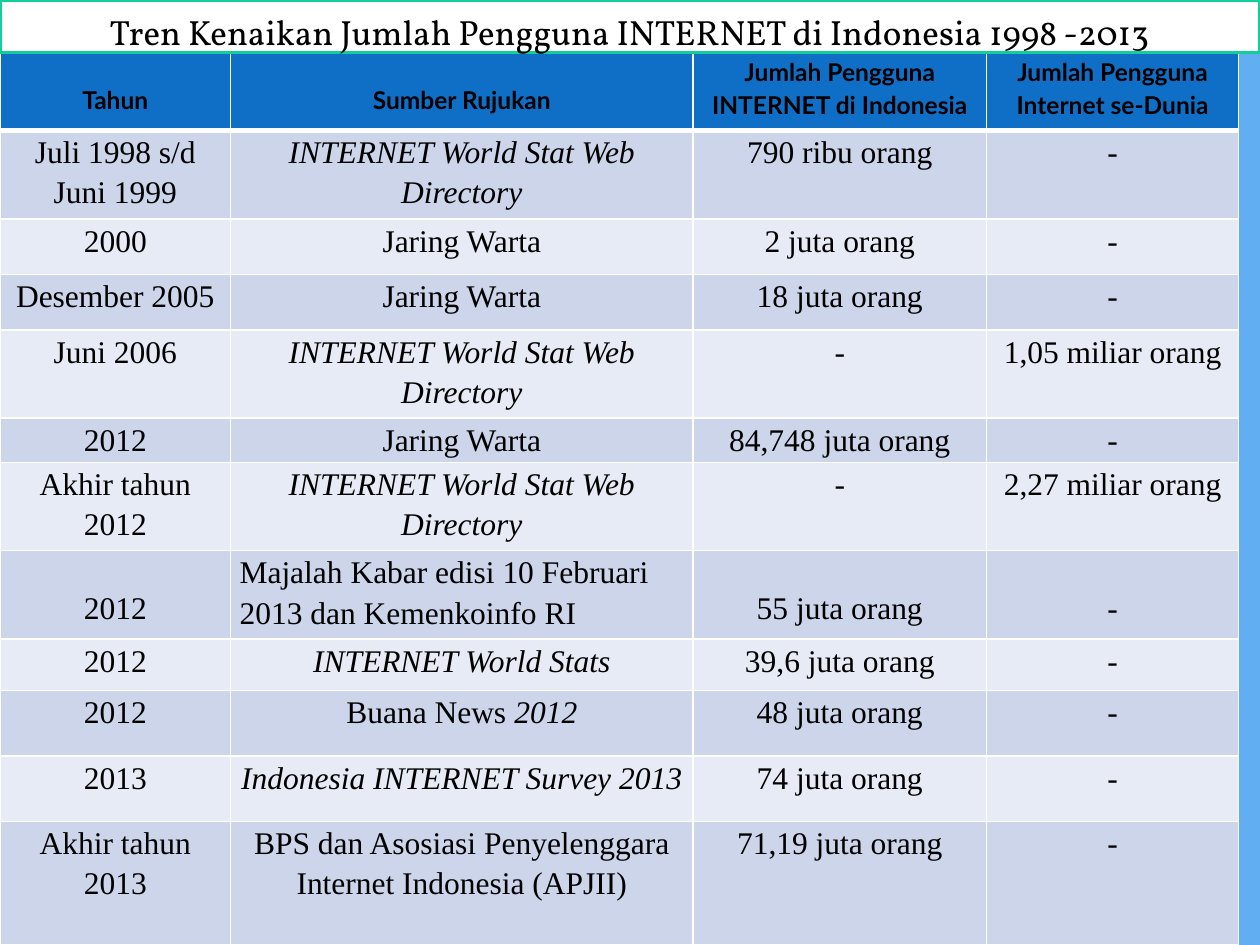
from lxml import etree
from pptx import Presentation
from pptx.dml.color import RGBColor
from pptx.enum import shapes, text
from pptx.oxml import ns
from pptx.util import Cm, Pt

SKY = RGBColor(0x62, 0xAE, 0xF2)
BLUE = RGBColor(0x0F, 0x6F, 0xC6)
GREEN = RGBColor(0x10, 0xCF, 0x9B)
BAND_DARK = RGBColor(0xCC, 0xD5, 0xEA)
BAND_LIGHT = RGBColor(0xE7, 0xEB, 0xF5)
WHITE = RGBColor(0xFF, 0xFF, 0xFF)
BLACK = RGBColor(0, 0, 0)

TITLE = "Tren Kenaikan Jumlah Pengguna INTERNET di Indonesia 1998 -2013"
HEADINGS = ("Tahun", "Sumber Rujukan", "Jumlah Pengguna INTERNET di Indonesia",
            "Jumlah Pengguna Internet se-Dunia")
DIRECTORY = "*INTERNET World Stat Web Directory"
MAGAZINE = "Majalah Kabar edisi 10 Februari 2013 dan Kemenkoinfo RI"
# An asterisk starts the italic part of a text.
RECORDS = (
    ("Juli 1998 s/d\nJuni 1999", DIRECTORY, "790 ribu orang", "-"),
    ("2000", "Jaring Warta", "2 juta orang", "-"),
    ("Desember 2005", "Jaring Warta", "18 juta orang", "-"),
    ("Juni 2006", DIRECTORY, "-", "1,05 miliar orang"),
    ("2012", "Jaring Warta", "84,748 juta orang", "-"),
    ("Akhir tahun 2012", DIRECTORY, "-", "2,27 miliar orang"),
    ("2012", MAGAZINE, "55 juta orang", "-"),
    ("2012", "*INTERNET World Stats", "39,6 juta orang", "-"),
    ("2012", "Buana News *2012", "48 juta orang", "-"),
    ("2013", "*Indonesia INTERNET Survey 2013", "74 juta orang", "-"),
    ("Akhir tahun 2013", "BPS dan Asosiasi Penyelenggara Internet Indonesia (APJII)",
     "71,19 juta orang", "-"),
)
COLUMN_WIDTHS = (4.65, 9.32, 5.92, 5.08)
ROW_HEIGHTS = (1.57, 1.78, 1.12, 1.12, 1.78, 0.89, 1.78, 1.78, 1.04, 1.32, 1.32, 2.49)


def set_font(font, name, size, bold=False, italic=False):
    font.name, font.size = name, Pt(size)
    font.bold, font.italic = bold, italic
    font.color.rgb = BLACK


def add_title(slide, left, top, width, height):
    banner = slide.shapes.add_shape(shapes.MSO_SHAPE.RECTANGLE, left, top, width, height)
    banner.shadow.inherit = False
    banner.fill.solid()
    banner.fill.fore_color.rgb = WHITE
    banner.line.color.rgb = GREEN
    banner.line.width = Pt(2)
    frame = banner.text_frame
    frame.word_wrap = True
    frame.margin_left = frame.margin_right = frame.margin_bottom = 0
    frame.vertical_anchor = text.MSO_ANCHOR.BOTTOM
    frame.text = TITLE
    heading = frame.paragraphs[0]
    heading.alignment = text.PP_ALIGN.CENTER
    set_font(heading.runs[0].font, "Vollkorn", 20)


def add_borders(cell, bottom_width):
    """Draw white cell borders; they must come before the fill in tcPr."""
    properties = cell._tc.get_or_add_tcPr()
    for side, width in (("L", 1), ("R", 1), ("T", 1), ("B", bottom_width)):
        border = etree.SubElement(properties, ns.qn(f"a:ln{side}"), w=str(Pt(width)))
        fill = etree.SubElement(border, ns.qn("a:solidFill"))
        etree.SubElement(fill, ns.qn("a:srgbClr"), val=str(WHITE))


def fill_cell(cell, content, color, font_name, size, bold=False, drop=0,
              alignment=text.PP_ALIGN.CENTER):
    """Write and style one cell; drop lowers its text by that many centimetres."""
    add_borders(cell, 3 if bold else 1)
    cell.fill.solid()
    cell.fill.fore_color.rgb = color
    cell.margin_left = cell.margin_right = Cm(0.18)
    cell.margin_top, cell.margin_bottom = Cm(drop), 0
    cell.text_frame.text = content.replace("*", "")
    for paragraph, line in zip(cell.text_frame.paragraphs, content.split("\n")):
        paragraph.alignment = alignment
        paragraph.line_spacing = 1.15
        upright, _, slanted = line.partition("*")
        paragraph.text = upright or slanted
        if upright and slanted:
            paragraph.add_run().text = slanted
        for run in paragraph.runs:
            set_font(run.font, font_name, size, bold, bool(slanted) and run.text == slanted)


def add_user_table(slide, left, top):
    table = slide.shapes.add_table(
        len(ROW_HEIGHTS), len(COLUMN_WIDTHS), left, top,
        Cm(sum(COLUMN_WIDTHS)), Cm(sum(ROW_HEIGHTS))).table
    for column, width in zip(table.columns, COLUMN_WIDTHS):
        column.width = Cm(width)
    for row, height in zip(table.rows, ROW_HEIGHTS):
        row.height = Cm(height)
    for c, heading in enumerate(HEADINGS):
        fill_cell(table.cell(0, c), heading, BLUE, "Lato", 14, bold=True,
                  drop=0.58 if c < 2 else 0)
    for r, record in enumerate(RECORDS, start=1):
        band = BAND_DARK if r % 2 else BAND_LIGHT
        for c, content in enumerate(record):
            is_magazine = content == MAGAZINE
            fill_cell(table.cell(r, c), content, band, "Times New Roman", 18,
                      drop=0.71 if MAGAZINE in record and not is_magazine else 0,
                      alignment=text.PP_ALIGN.LEFT if is_magazine else text.PP_ALIGN.CENTER)


def main():
    deck = Presentation()
    deck.slide_width, deck.slide_height = Cm(25.4), Cm(19.05)
    slide = deck.slides.add_slide(deck.slide_layouts[6])
    slide.background.fill.solid()
    slide.background.fill.fore_color.rgb = SKY
    title_height = Cm(1.06)
    add_user_table(slide, 0, title_height)
    add_title(slide, 0, 0, deck.slide_width, title_height)
    deck.save("out.pptx")


if __name__ == "__main__":
    main()
